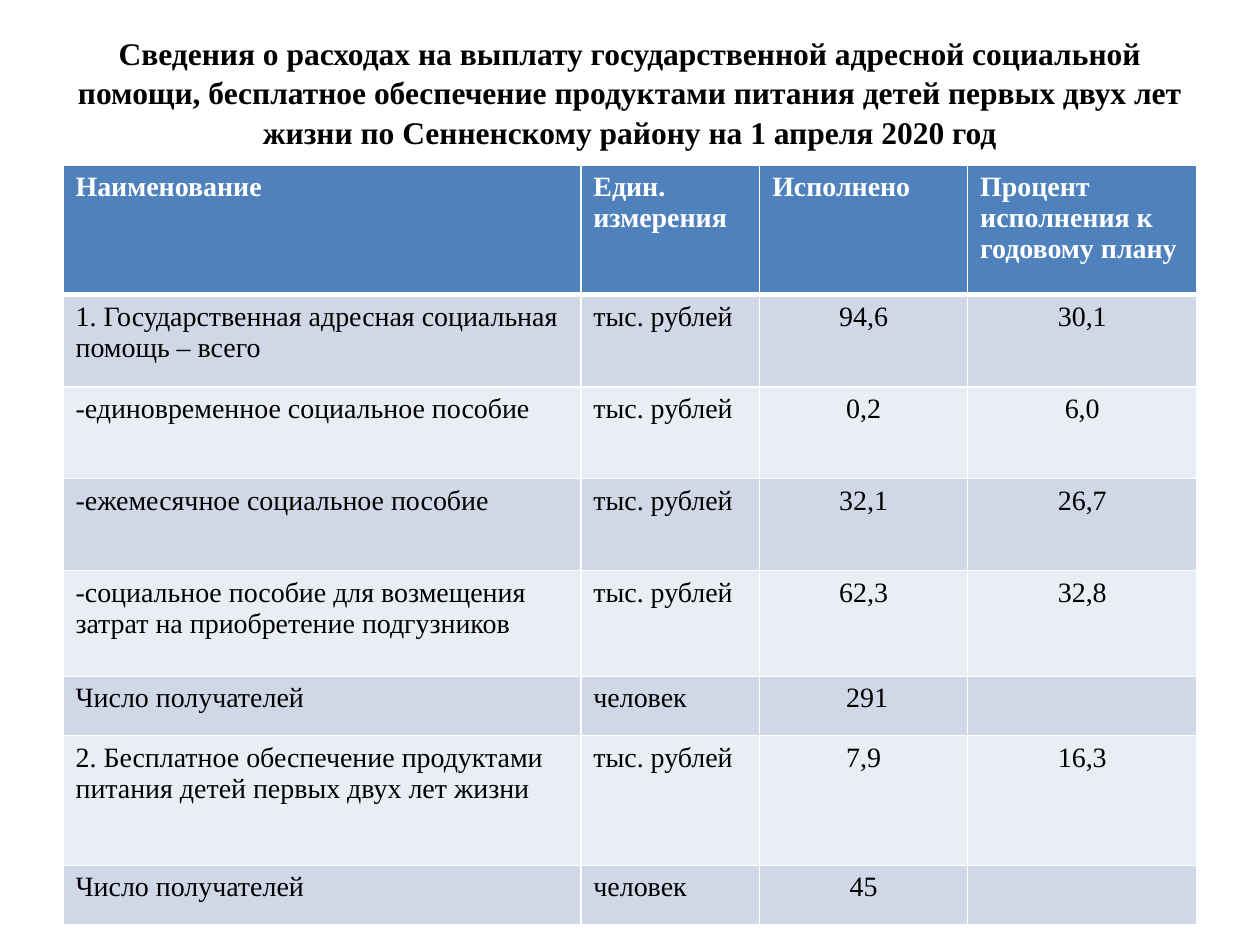
from lxml import etree
from pptx import Presentation
from pptx import util as u
from pptx.dml.color import RGBColor
from pptx.enum import text
from pptx.oxml.ns import qn

COLORS = {"ink": "000000", "white": "FFFFFF", "header": "4F81BD",
          "odd": "D0D8E8", "even": "E9EDF4"}
TITLE = ("Сведения о расходах на выплату государственной адресной социальной "
         "помощи, бесплатное обеспечение продуктами питания детей первых двух лет "
         "жизни по Сенненскому району на 1 апреля 2020 год")
WIDTHS = [4.11, 1.42, 1.65, 1.82]
HEIGHTS = [1.03, 0.73, 0.73, 0.73, 0.84, 0.47, 1.03, 0.47]
ROWS = [
    ("Наименование", "Един. измерения", "Исполнено", "Процент исполнения к годовому плану"),
    ("1. Государственная адресная социальная помощь – всего", "тыс. рублей", "94,6", "30,1"),
    ("-единовременное социальное пособие", "тыс. рублей", "0,2", "6,0"),
    ("-ежемесячное социальное пособие", "тыс. рублей", "32,1", "26,7"),
    ("-социальное пособие для возмещения затрат на приобретение подгузников",
     "тыс. рублей", "62,3", "32,8"),
    ("Число получателей", "человек", " 291", ""),
    ("2. Бесплатное обеспечение продуктами питания детей первых двух лет жизни",
     "тыс. рублей", "7,9", "16,3"),
    ("Число получателей", "человек", "45", ""),
]


class SlideBuilder:
    """Holds the style and the current slide, and draws its elements."""

    font = "Times New Roman"

    def __init__(self, page):
        self.page = page

    def paragraph(self, frame, words, size, color, bold=False, centred=False):
        para = frame.paragraphs[0]
        para.alignment = text.PP_ALIGN.CENTER if centred else text.PP_ALIGN.LEFT
        span = para.add_run()
        span.text = words
        for name, value in {"name": self.font, "size": u.Pt(size), "bold": bold}.items():
            setattr(span.font, name, value)
        span.font.color.rgb = RGBColor.from_string(COLORS[color])
        return para

    def title(self, words, left, top, width, height):
        box = self.page.shapes.add_textbox(*map(u.Inches, (left, top, width, height)))
        frame = box.text_frame
        frame.word_wrap = True
        frame.vertical_anchor = text.MSO_ANCHOR.MIDDLE
        para = self.paragraph(frame, words, 18, "ink", bold=True, centred=True)
        para.line_spacing = 1.05

    def border(self, cell, side, points):
        properties = cell._tc.get_or_add_tcPr()
        line = etree.SubElement(properties, qn(f"a:ln{side}"), w=str(u.Pt(points)))
        fill = etree.SubElement(line, qn("a:solidFill"))
        etree.SubElement(fill, qn("a:srgbClr"), val=COLORS["white"])

    def cell(self, cell, words, row, column):
        header = row == 0
        for side in "LRTB":
            heavy = (header and side == "B") or (row == 1 and side == "T")
            self.border(cell, side, 3 if heavy else 1)
        cell.fill.solid()
        band = "header" if header else "odd" if row % 2 else "even"
        cell.fill.fore_color.rgb = RGBColor.from_string(COLORS[band])
        if words:
            self.paragraph(cell.text_frame, words, 16, "white" if header else "ink",
                           bold=header, centred=not header and column > 1)

    def table(self, rows, widths, heights, left, top):
        area = map(u.Inches, (left, top, sum(widths), sum(heights)))
        table = self.page.shapes.add_table(len(rows), len(widths), *area).table
        for column, width in zip(table.columns, widths):
            column.width = u.Inches(width)
        for row, height in zip(table.rows, heights):
            row.height = u.Inches(height)
        for r, values in enumerate(rows):
            for c, words in enumerate(values):
                self.cell(table.cell(r, c), words, r, c)


def main():
    deck = Presentation()
    deck.slide_width, deck.slide_height = u.Inches(10), u.Inches(7.5)
    builder = SlideBuilder(deck.slides.add_slide(deck.slide_layouts[6]))
    builder.title(TITLE, 0.5, 0.3, 9, 0.85)
    builder.table(ROWS, WIDTHS, HEIGHTS, 0.5, 1.31)
    deck.save("out.pptx")


if __name__ == "__main__":
    main()
